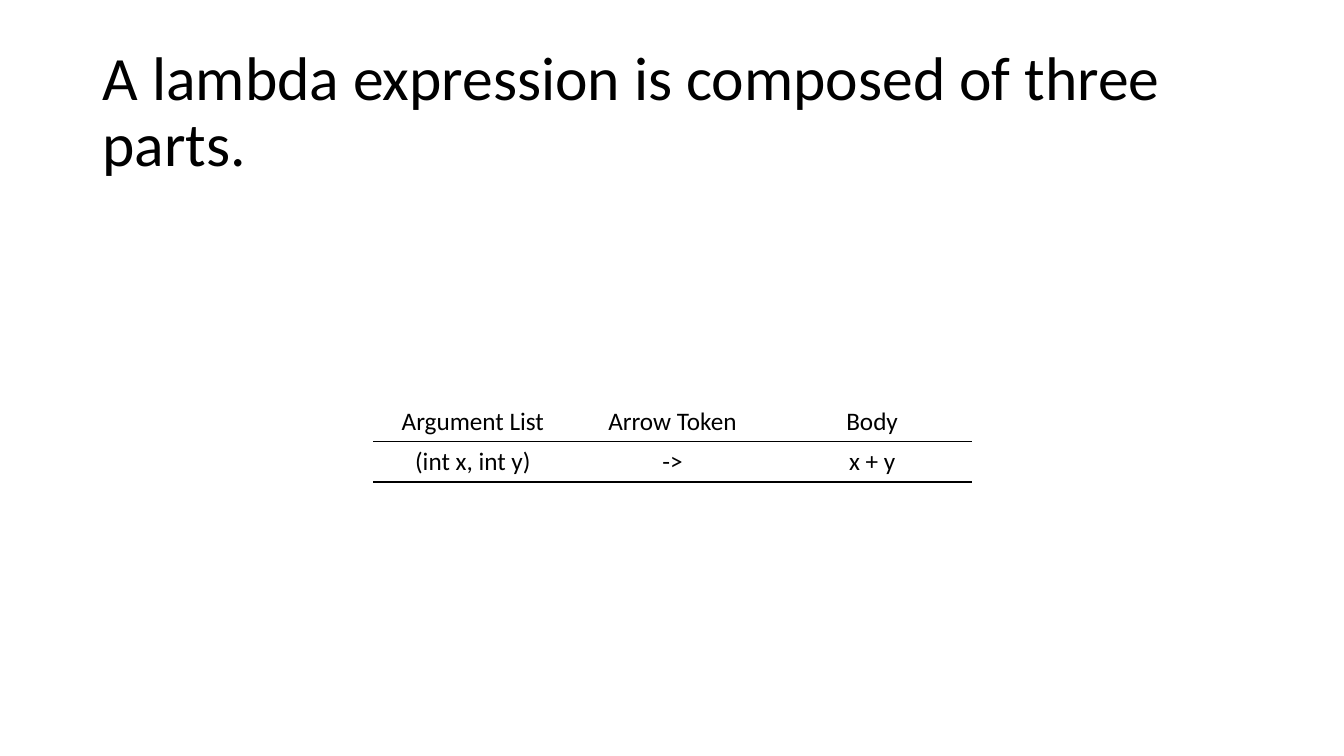
"""Build a slide that shows the three parts of a lambda expression."""
from dataclasses import dataclass
from typing import Any

from lxml.etree import SubElement
from pptx import Presentation
from pptx.dml.color import RGBColor
from pptx.enum.text import MSO_ANCHOR, PP_ALIGN
from pptx.oxml.ns import qn
from pptx.slide import Slide
from pptx.table import _Cell
from pptx.util import Inches, Pt


@dataclass(frozen=True)
class Theme:
    """Hold the colours, font and sizes of the slide."""
    ink: str = "000000"
    paper: str = "FFFFFF"
    font: str = "Calibri"
    title_size: float = 44
    cell_size: float = 18
    rule_width: float = 1.5
    table_style: str = "{2D5ABB26-0587-4C30-8999-92F81FD0307C}"


@dataclass(frozen=True)
class LambdaPart:
    """Name one part of a lambda expression and give its example."""
    name: str
    example: str


THEME = Theme()
PARTS = [
    LambdaPart("Argument List", "(int x, int y)"),
    LambdaPart("Arrow Token", "->"),
    LambdaPart("Body", "x + y"),
]
COLUMN_WIDTH = 1.98
ROW_HEIGHT = 0.4


def set_attributes(target: Any, values: dict[str, Any]) -> None:
    """Set each named attribute of the target."""
    for name, value in values.items():
        setattr(target, name, value)


def write_text(para: Any, text: str, size: float) -> None:
    """Add text to a paragraph in the theme font."""
    span = para.add_run()
    span.text = text
    set_attributes(span.font, {"name": THEME.font, "size": Pt(size)})
    span.font.color.rgb = RGBColor.from_string(THEME.ink)


def draw_title(page: Slide, text: str) -> None:
    """Draw the slide title."""
    box = page.shapes.add_textbox(Inches(0.92), Inches(0.4), Inches(11.5), Inches(1.45))
    set_attributes(box.text_frame, {"word_wrap": True, "vertical_anchor": MSO_ANCHOR.MIDDLE})
    para = box.text_frame.paragraphs[0]
    para.line_spacing = 0.9
    write_text(para, text, THEME.title_size)


def draw_rule(cell: _Cell, side: str) -> None:
    """Draw a solid border on one side of a cell."""
    properties = cell._tc.get_or_add_tcPr()
    line = SubElement(properties, qn(f"a:{side}"), w=str(Pt(THEME.rule_width)))
    fill = SubElement(line, qn("a:solidFill"))
    SubElement(fill, qn("a:srgbClr"), val=THEME.ink)


def draw_cell(cell: _Cell, text: str, sides: list[str]) -> None:
    """Draw one centred cell with its borders."""
    cell.vertical_anchor = MSO_ANCHOR.MIDDLE
    for side in sides:
        draw_rule(cell, side)
    cell.fill.solid()
    cell.fill.fore_color.rgb = RGBColor.from_string(THEME.paper)
    para = cell.text_frame.paragraphs[0]
    para.alignment = PP_ALIGN.CENTER
    write_text(para, text, THEME.cell_size)


def draw_parts(page: Slide, parts: list[LambdaPart]) -> None:
    """Draw the table of lambda parts."""
    frame = page.shapes.add_table(
        2, len(parts), Inches(3.7), Inches(3.98),
        Inches(COLUMN_WIDTH * len(parts)), Inches(ROW_HEIGHT * 2),
    )
    table = frame.table
    table._tbl.tblPr.find(qn("a:tableStyleId")).text = THEME.table_style
    set_attributes(table, {"first_row": False, "horz_banding": False})
    for column, part in enumerate(parts):
        draw_cell(table.cell(0, column), part.name, ["lnB"])
        draw_cell(table.cell(1, column), part.example, ["lnT", "lnB"])


def main() -> None:
    """Build and save the deck."""
    deck = Presentation()
    set_attributes(deck, {"slide_width": Inches(13.33), "slide_height": Inches(7.5)})
    page = deck.slides.add_slide(deck.slide_layouts[6])
    draw_title(page, "A lambda expression is composed of three parts.")
    draw_parts(page, PARTS)
    deck.save("out.pptx")


if __name__ == "__main__":
    main()
